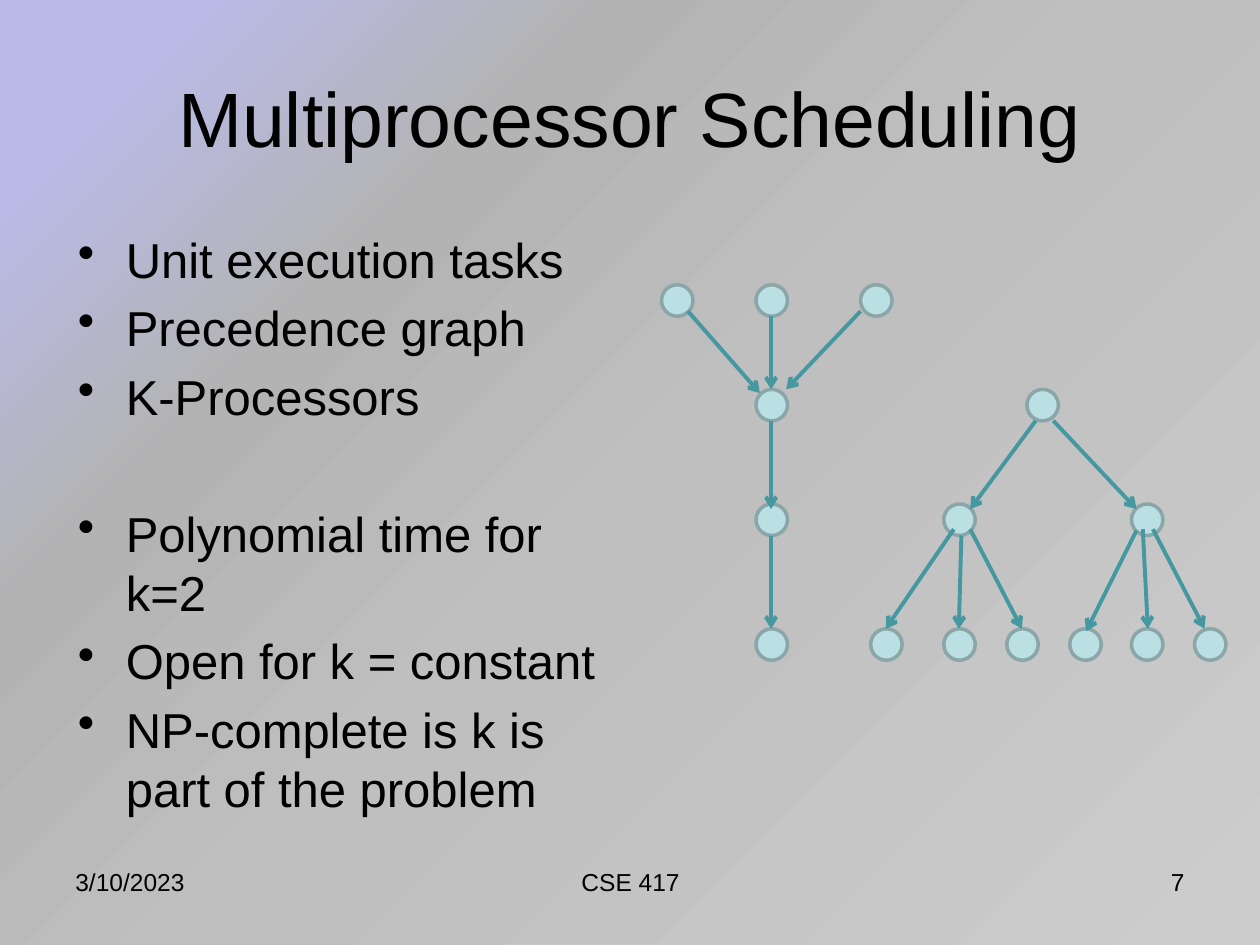
from lxml import etree
from pptx import Presentation
from pptx.dml import color
from pptx.enum import shapes, text
from pptx.oxml import ns, parse_xml
from pptx.util import Inches, Pt


def rgb(value):
    return color.RGBColor.from_string(value)


def add_text(lines, left, top, width, height, size=14, align=text.PP_ALIGN.LEFT,
             anchor=text.MSO_ANCHOR.TOP, bullet=False):
    box = page.shapes.add_textbox(Inches(left), Inches(top), Inches(width), Inches(height))
    frame = box.text_frame
    frame.word_wrap = True
    frame.vertical_anchor = anchor
    for index, (line, space) in enumerate(lines):
        para = frame.add_paragraph() if index else frame.paragraphs[0]
        para.alignment = align
        para.space_before = Pt(space)
        span = para.add_run()
        span.text = line
        span.font.name = "Arial"
        span.font.size = Pt(size)
        span.font.color.rgb = rgb("000000")
        if bullet:
            para.line_spacing = Pt(33.6)
            props = para._p.get_or_add_pPr()
            props.set("marL", str(Inches(0.38)))
            props.set("indent", str(-Inches(0.38)))
            etree.SubElement(props, ns.qn("a:buChar")).set("char", "•")


deck = Presentation()
deck.slide_width, deck.slide_height = Inches(10), Inches(7.5)
page = deck.slides.add_slide(deck.slide_layouts[6])

page.background.fill.gradient()
gradient = page.element.find(".//" + ns.qn("a:gradFill"))
stops = "".join(
    f'<a:gs pos="{position * 1000}"><a:srgbClr val="{shade}"/></a:gs>'
    for position, shade in [(0, "CCCCCC"), (48, "BFBFBF"), (72, "B3B3B3"), (91, "BABAE8")]
)
gradient.getparent().replace(gradient, parse_xml(
    f'<a:gradFill {ns.nsdecls("a")} rotWithShape="0"><a:gsLst>{stops}</a:gsLst>'
    '<a:path path="circle"><a:fillToRect l="100000" t="100000"/></a:path></a:gradFill>'
))

add_text([("Multiprocessor Scheduling", 0)], 0.5, 0.3, 9, 1.25, size=44,
         align=text.PP_ALIGN.CENTER, anchor=text.MSO_ANCHOR.MIDDLE)
add_text([
    ("Unit execution tasks", 0),
    ("Precedence graph", 5.6),
    ("K-Processors", 5.6),
    ("Polynomial time for k=2", 44.8),
    ("Open for k = constant", 5.6),
    ("NP-complete is k is part of the problem", 5.6),
], 0.52, 1.77, 4.42, 4.95, size=28, bullet=True)

task_rows = [
    (2.26, [5.25, 6, 6.83]),
    (3.09, [6, 8.15]),
    (4, [6, 7.49, 8.98]),
    (4.99, [6, 6.91, 7.49, 7.99, 8.49, 8.98, 9.48]),
]
for top, lefts in task_rows:
    for left in lefts:
        task = page.shapes.add_shape(shapes.MSO_SHAPE.OVAL, Inches(left), Inches(top),
                                     Inches(0.25), Inches(0.25))
        task.shadow.inherit = False
        task.fill.solid()
        task.fill.fore_color.rgb = rgb("BBE0E3")
        task.line.color.rgb = rgb("8AA6A8")
        task.line.width = Pt(2)

precedences = [
    (5.46, 2.47, 6.03, 3.12), (6.12, 2.51, 6.12, 3.09), (6.83, 2.47, 6.24, 3.09),
    (6.12, 3.34, 6.12, 4.04), (6.12, 4.25, 6.12, 4.99),
    (8.22, 3.34, 7.7, 4.04), (8.36, 3.34, 9.02, 4.04),
    (7.57, 4.2, 7.03, 4.99), (7.63, 4.25, 7.61, 4.99), (7.7, 4.2, 8.11, 4.99),
    (9.15, 4.2, 9.56, 4.99), (9.07, 4.2, 9.11, 4.99), (9.02, 4.21, 8.62, 5.01),
]
for ends in precedences:
    arrow = page.shapes.add_connector(shapes.MSO_CONNECTOR.STRAIGHT, *map(Inches, ends))
    arrow.line.color.rgb = rgb("4597A0")
    arrow.line.width = Pt(2.25)
    etree.SubElement(arrow.line._get_or_add_ln(), ns.qn("a:tailEnd")).set("type", "arrow")
    etree.SubElement(arrow._element.spPr, ns.qn("a:effectLst"))

for label, left, width, align in [
    ("3/10/2023", 0.5, 2.33, text.PP_ALIGN.LEFT),
    ("CSE 417", 3.42, 3.17, text.PP_ALIGN.CENTER),
    ("7", 7.17, 2.33, text.PP_ALIGN.RIGHT),
]:
    add_text([(label, 0)], left, 6.83, width, 0.52, align=align)

deck.save("out.pptx")
